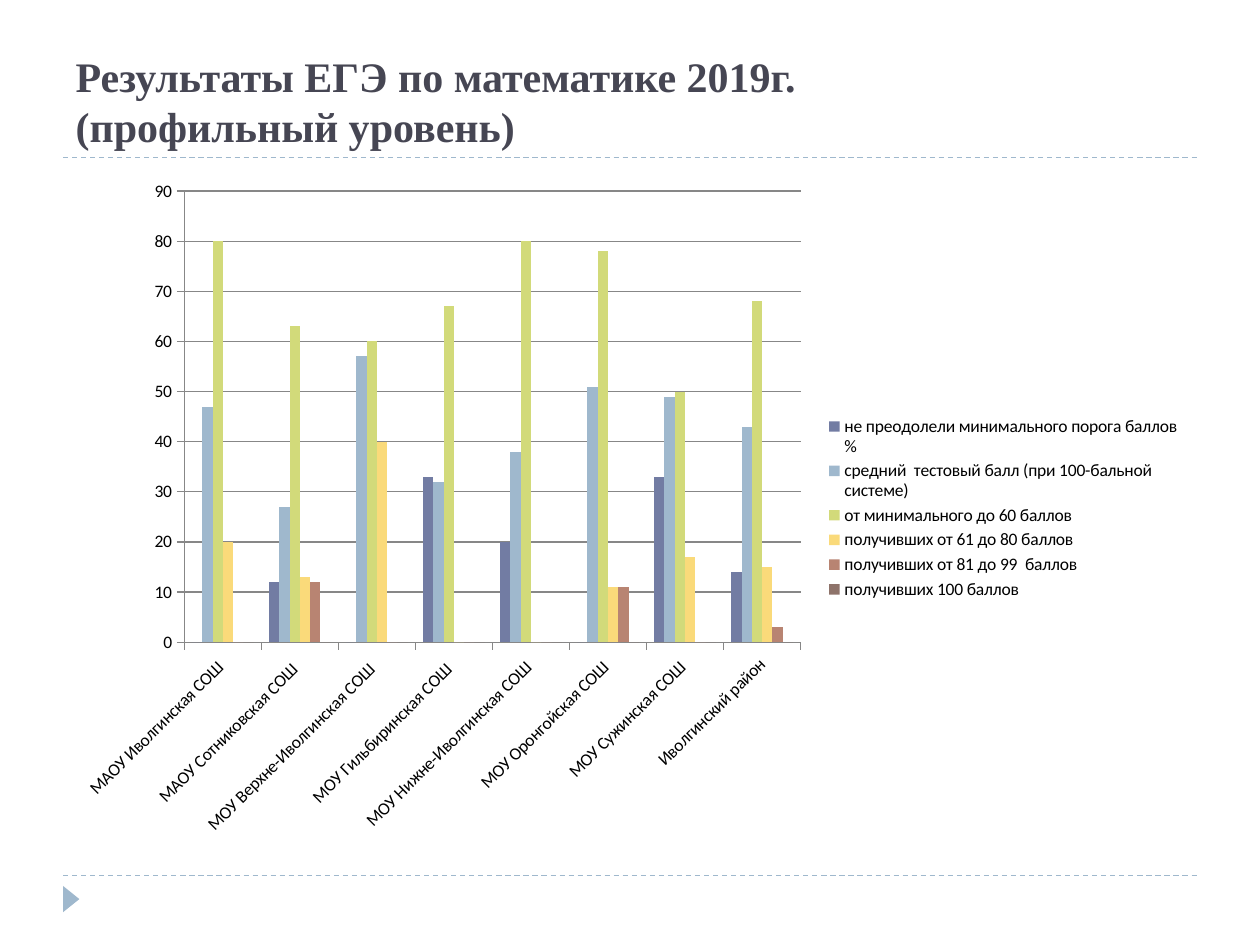
import pptx
import pptx.chart.data
import pptx.dml.color
import pptx.enum.chart
import pptx.enum.dml
import pptx.enum.shapes
import pptx.enum.text
import pptx.util
from lxml import etree
from pptx.util import Cm

COLORS = {
    "title": "464653",
    "accent": "9FB8CD",
    "axis": "878787",
    "text": "000000",
}
SCHOOLS = [
    "МАОУ Иволгинская СОШ ",
    "МАОУ Сотниковская СОШ  ",
    "МОУ Верхне-Иволгинская СОШ  ",
    "МОУ Гильбиринская СОШ  ",
    "МОУ Нижне-Иволгинская СОШ ",
    "МОУ Оронгойская СОШ ",
    "МОУ Сужинская СОШ ",
    "Иволгинский район",
]
RESULTS = [
    ("не преодолели минимального порога баллов  %", "727CA3", [0, 12, 0, 33, 20, 0, 33, 14]),
    ("средний  тестовый балл (при 100-бальной системе)", "9FB8CD", [47, 27, 57, 32, 38, 51, 49, 43]),
    ("от минимального до 60 баллов", "D2DA7A", [80, 63, 60, 67, 80, 78, 50, 68]),
    ("получивших от 61 до 80 баллов", "FADA7A", [20, 13, 40, 0, 0, 11, 17, 15]),
    ("получивших от 81 до 99  баллов", "B88472", [0, 12, 0, 0, 0, 11, 0, 3]),
    ("получивших 100 баллов", "8E736A", [0, 0, 0, 0, 0, 0, 0, 0]),
]


def rgb(value):
    return pptx.dml.color.RGBColor.from_string(value)


deck = pptx.Presentation()
deck.slide_width = Cm(25.4)
deck.slide_height = Cm(19.05)
page = deck.slides.add_slide(deck.slide_layouts[5])

# Dashed rules and corner marker
for y in (Cm(17.65), Cm(3.18)):
    rule = page.shapes.add_connector(
        pptx.enum.shapes.MSO_CONNECTOR.STRAIGHT, Cm(1.27), y, Cm(24.13), y)
    rule.line.color.rgb = rgb(COLORS["accent"])
    rule.line.width = pptx.util.Pt(0.75)
    rule.line.dash_style = pptx.enum.dml.MSO_LINE.DASH
    etree.SubElement(
        rule._element.spPr,
        "{http://schemas.openxmlformats.org/drawingml/2006/main}effectLst")

marker = page.shapes.add_shape(
    pptx.enum.shapes.MSO_SHAPE.ISOSCELES_TRIANGLE, Cm(1.17), Cm(17.96), Cm(0.53), Cm(0.33))
marker.rotation = 90
marker.shadow.inherit = False
marker.fill.solid()
marker.fill.fore_color.rgb = rgb(COLORS["accent"])
marker.line.fill.background()

# Title
title = page.shapes.title
title.left, title.top, title.width, title.height = Cm(1.27), Cm(0.76), Cm(22.35), Cm(2.41)
frame = title.text_frame
frame.word_wrap = True
frame.auto_size = pptx.enum.text.MSO_AUTO_SIZE.NONE
frame.vertical_anchor = pptx.enum.text.MSO_ANCHOR.BOTTOM
frame.text = "Результаты ЕГЭ по математике 2019г.\v(профильный уровень)"
para = frame.paragraphs[0]
para.alignment = pptx.enum.text.PP_ALIGN.LEFT
para.font.name = "Times New Roman"
para.font.size = pptx.util.Pt(24)
para.font.bold = True
para.font.color.rgb = rgb(COLORS["title"])

# Results chart
data = pptx.chart.data.CategoryChartData()
data.categories = SCHOOLS
for name, color, values in RESULTS:
    data.add_series(name, values)
chart = page.shapes.add_chart(
    pptx.enum.chart.XL_CHART_TYPE.COLUMN_CLUSTERED,
    Cm(1.27), Cm(3.38), Cm(22.86), Cm(13.72), data).chart
chart.has_title = False
chart.font.name = "Calibri"
chart.font.size = pptx.util.Pt(10)
chart.font.color.rgb = rgb(COLORS["text"])

plot = chart.plots[0]
plot.vary_by_categories = False
plot.gap_width = 150
plot.overlap = 0
for series, (name, color, values) in zip(plot.series, RESULTS):
    series.format.fill.solid()
    series.format.fill.fore_color.rgb = rgb(color)

value_axis = chart.value_axis
value_axis.minimum_scale = 0
value_axis.maximum_scale = 90
value_axis.major_unit = 10
value_axis.has_major_gridlines = True
for line in (value_axis.format.line, value_axis.major_gridlines.format.line,
             chart.category_axis.format.line):
    line.color.rgb = rgb(COLORS["axis"])
    line.width = pptx.util.Pt(0.75)
for axis in (value_axis, chart.category_axis):
    axis.major_tick_mark = pptx.enum.chart.XL_TICK_MARK.OUTSIDE
    axis.tick_labels.font.size = pptx.util.Pt(10)
label_body = chart.category_axis._element.txPr.bodyPr
label_body.set("rot", "-2700000")
label_body.set("vert", "horz")

chart.has_legend = True
chart.legend.position = pptx.enum.chart.XL_LEGEND_POSITION.RIGHT
chart.legend.include_in_layout = False

deck.save("out.pptx")
